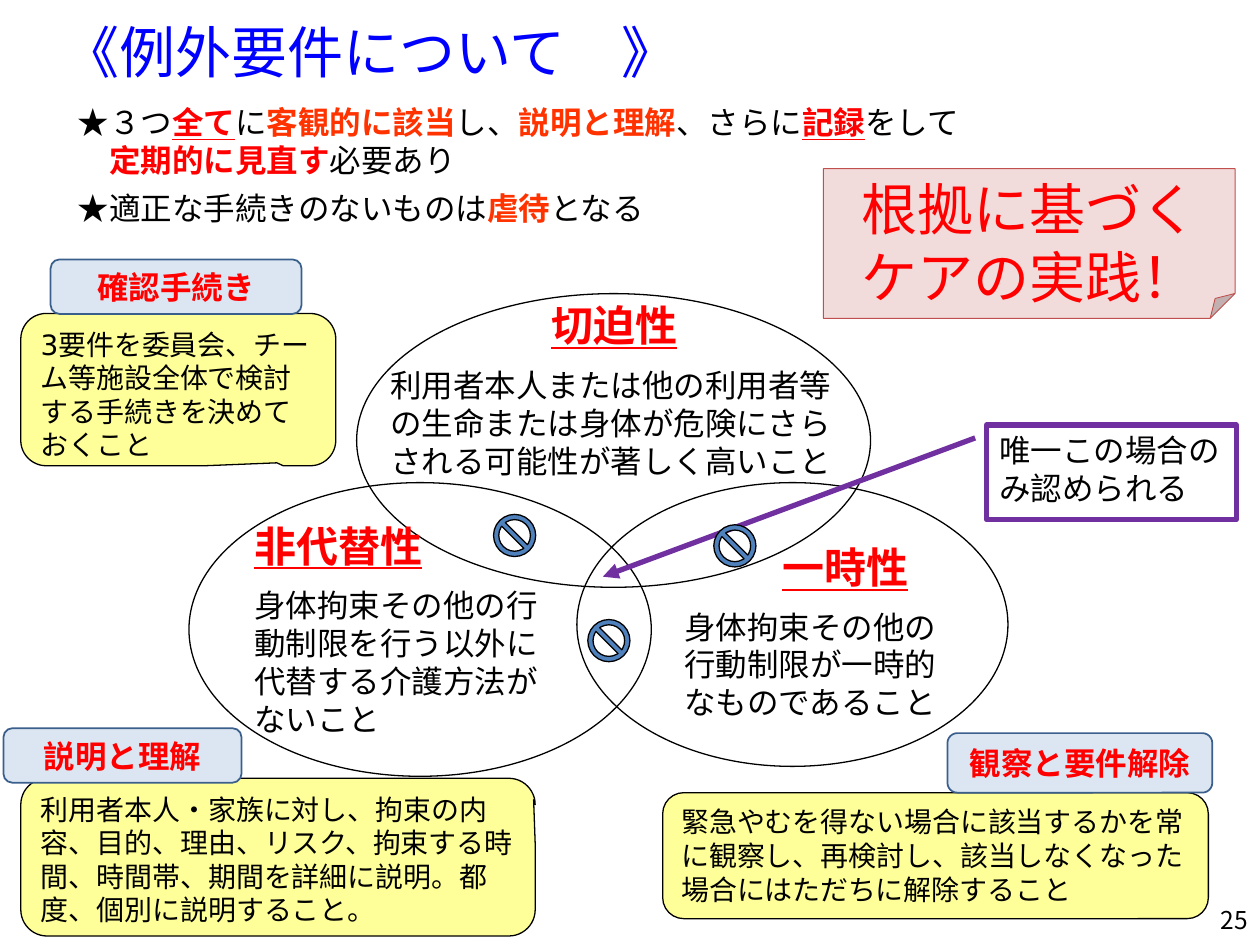
from lxml import etree
from pptx import Presentation
from pptx import util as u
from pptx.dml.color import RGBColor
from pptx.enum import shapes, text
from pptx.oxml.ns import qn

BLACK, RED, ORANGE = "000000", "FF0000", "FF3300"
SANS, GOTHIC = "DejaVu Sans", "Noto Sans CJK JP"
FORM, ALIGN, ANCHOR = shapes.MSO_SHAPE, text.PP_ALIGN, text.MSO_ANCHOR


def colour(value):
    """Turn a hex string into a colour."""
    return RGBColor.from_string(value)


def cm(box):
    """Turn a box in centimetres into lengths."""
    return [u.Cm(length) for length in box]


def style(font, size, face, ink=BLACK, bold=False, underline=False):
    """Set the look of a paragraph font."""
    font.size, font.name, font.bold, font.underline = u.Pt(size), face, bold, underline
    font.color.rgb = colour(ink)


def write(frame, lines, size, face=SANS, ink=BLACK, bold=False,
          align=ALIGN.LEFT, anchor=ANCHOR.TOP):
    """Fill a frame with equally formatted paragraphs."""
    frame.word_wrap = True
    frame.vertical_anchor = anchor
    for index, line in enumerate(lines):
        para = frame.add_paragraph() if index else frame.paragraphs[0]
        para.text, para.alignment = line, align
        style(para.font, size, face, ink, bold)


def add_form(page, kind, box, fill=None, line=BLACK, width=0.75):
    """Add a preset shape with a plain fill and outline."""
    form = page.shapes.add_shape(kind, *cm(box))
    form.shadow.inherit = False
    if fill:
        form.fill.solid()
        form.fill.fore_color.rgb = colour(fill)
    else:
        form.fill.background()
    form.line.color.rgb = colour(line)
    form.line.width = u.Pt(width)
    return form


def adjust(form, values):
    """Set the adjustments of a shape in order."""
    for index, value in enumerate(values):
        form.adjustments[index] = value


def add_title(page, box):
    """Place the slide title."""
    title = page.shapes.title
    title.left, title.top, title.width, title.height = cm(box)
    write(title.text_frame, ["《例外要件について　》"], 32, GOTHIC, "0000FF")


def add_points(page, box):
    """Write the starred points with their emphasised words."""
    lines = [
        [("★３つ",), ("全て", RED, True), ("に",), ("客観的に該当", ORANGE), ("し、",),
         ("説明と理解", ORANGE), ("、さらに",), ("記録", RED, True), ("をして",)],
        [("　",), ("定期的に見直す", RED), ("必要あり",)],
        [("★適正な手続きのないものは",), ("虐待", ORANGE), ("となる",)],
    ]
    frame = page.shapes.add_textbox(*cm(box)).text_frame
    frame.margin_left = u.Cm(1.52)
    write(frame, [""] * len(lines), 18)
    for para, parts in zip(frame.paragraphs, lines):
        for words, *emphasis in parts:
            span = para.add_run()
            span.text = words
            if emphasis:
                span.font.color.rgb = colour(emphasis[0])
                span.font.bold = True
                span.font.underline = len(emphasis) > 1
    frame.paragraphs[-1].space_before = u.Pt(6)


def add_requirement(page, box, heading, body, align, lead=""):
    """Write an underlined requirement and its explanation."""
    frame = page.shapes.add_textbox(*cm(box)).text_frame
    write(frame, [lead, body], 18)
    first, second = frame.paragraphs
    first.alignment = align
    style(first.font, 24, SANS, RED, True)
    span = first.add_run()
    span.text = heading
    span.font.underline = True
    second.space_before = u.Pt(9)


def add_venn(page, box):
    """Draw the three overlapping requirements."""
    left, top = box[:2]
    for x, y, width, height in [(3.38, 0, 10.36, 5.92), (0, 3.81, 9.32, 5.92),
                                (7.82, 3.81, 8.69, 5.72)]:
        add_form(page, FORM.OVAL, (left + x, top + y, width, height))
    for (x, y, width, height), *words in [
        ((3.81, 0, 9.53, 5.26), "切迫性",
         "利用者本人または他の利用者等の生命または身体が危険にさらされる可能性が著しく高いこと",
         ALIGN.CENTER),
        ((1.07, 4.44, 6.78, 4.75), "非代替性",
         "身体拘束その他の行動制限を行う以外に代替する介護方法がないこと", ALIGN.LEFT),
        ((9.73, 4.87, 6.15, 3.94), "一時性",
         "身体拘束その他の行動制限が一時的なものであること", ALIGN.CENTER, "　"),
    ]:
        add_requirement(page, (left + x, top + y, width, height), *words)


def add_signs(page, box):
    """Mark the overlaps of only two requirements as forbidden."""
    left, top = box[:2]
    for x, y in [(6.14, 4.45), (10.58, 4.66), (8.04, 6.57)]:
        sign = add_form(page, FORM.NO_SYMBOL, (left + x, top + y, 0.85, 0.85), "4F81BD")
        adjust(sign, [0.125])


def add_only_case(page, box):
    """Point at the centre where all requirements meet."""
    callout = add_form(page, FORM.LINE_CALLOUT_1, box, None, "7030A0", 3)
    adjust(callout, [0.136, -0.046, 1.6, -1.538])
    outline = callout.line.color and callout._element.spPr.find(qn("a:ln"))
    etree.SubElement(outline, qn("a:tailEnd"), type="triangle")
    write(callout.text_frame, ["唯一この場合のみ認められる"], 18)


def add_procedure(page, box, words, pointer, tab, name):
    """Draw a yellow note with its name tab."""
    note = add_form(page, FORM.ROUNDED_RECTANGULAR_CALLOUT, box, "FFFF99")
    adjust(note, [*pointer, 0.167])
    write(note.text_frame, [words], 16)
    x, y, width, height = tab
    label = add_form(page, FORM.ROUNDED_RECTANGLE, (box[0] + x, box[1] + y, width, height),
                     "DCE6F2", "3A5F8C", 1)
    write(label.text_frame, [name], 18, "Calibri", RED, True, ALIGN.CENTER, ANCHOR.MIDDLE)


def add_message(page, box):
    """Draw the folded paper with the key message."""
    paper = add_form(page, FORM.FOLDED_CORNER, box, "F2DCDB", "C0504D", 0.5)
    write(paper.text_frame, ["根拠に基づく", "ケアの実践！"], 32, GOTHIC, RED,
          align=ALIGN.CENTER)


def add_number(page, box):
    """Write the page number."""
    frame = page.shapes.add_textbox(*cm(box)).text_frame
    write(frame, ["25"], 14, GOTHIC, align=ALIGN.RIGHT, anchor=ANCHOR.MIDDLE)


def main():
    """Build and save the slide."""
    deck = Presentation()
    deck.slide_width, deck.slide_height = u.Cm(25.4), u.Cm(19.05)
    page = deck.slides.add_slide(deck.slide_layouts[5])
    venn = (3.81, 5.92, 16.51, 9.73)
    add_title(page, (1.02, 0.23, 20.8, 2.21))
    add_venn(page, venn)
    add_only_case(page, (19.89, 8.57, 5.03, 1.91))
    add_signs(page, venn)
    add_procedure(page, (0.42, 6.32, 6.35, 3.07),
                  "3要件を委員会、チーム等施設全体で検討する手続きを決めておくこと",
                  (0.313, 0.481), (0.6, -1.09, 5.06, 1.1), "確認手続き")
    add_procedure(page, (0.42, 15.69, 10.37, 3.18),
                  "利用者本人・家族に対し、拘束の内容、目的、理由、リスク、拘束する時間、"
                  "時間帯、期間を詳細に説明。都度、個別に説明すること。",
                  (0.497, -0.363), (-0.35, -1.01, 4.8, 1.1), "説明と理解")
    add_procedure(page, (13.36, 15.98, 11, 2.54),
                  "緊急やむを得ない場合に該当するかを常に観察し、再検討し、"
                  "該当しなくなった場合にはただちに解除すること",
                  (0.024, -0.5), (5.74, -1.2, 5.34, 1.2), "観察と要件解除")
    add_points(page, (0.05, 1.96, 19.86, 2.77))
    add_message(page, (16.6, 3.4, 8.3, 3.02))
    add_number(page, (19.69, 18.03, 5.72, 1.02))
    deck.save("out.pptx")


if __name__ == "__main__":
    main()
